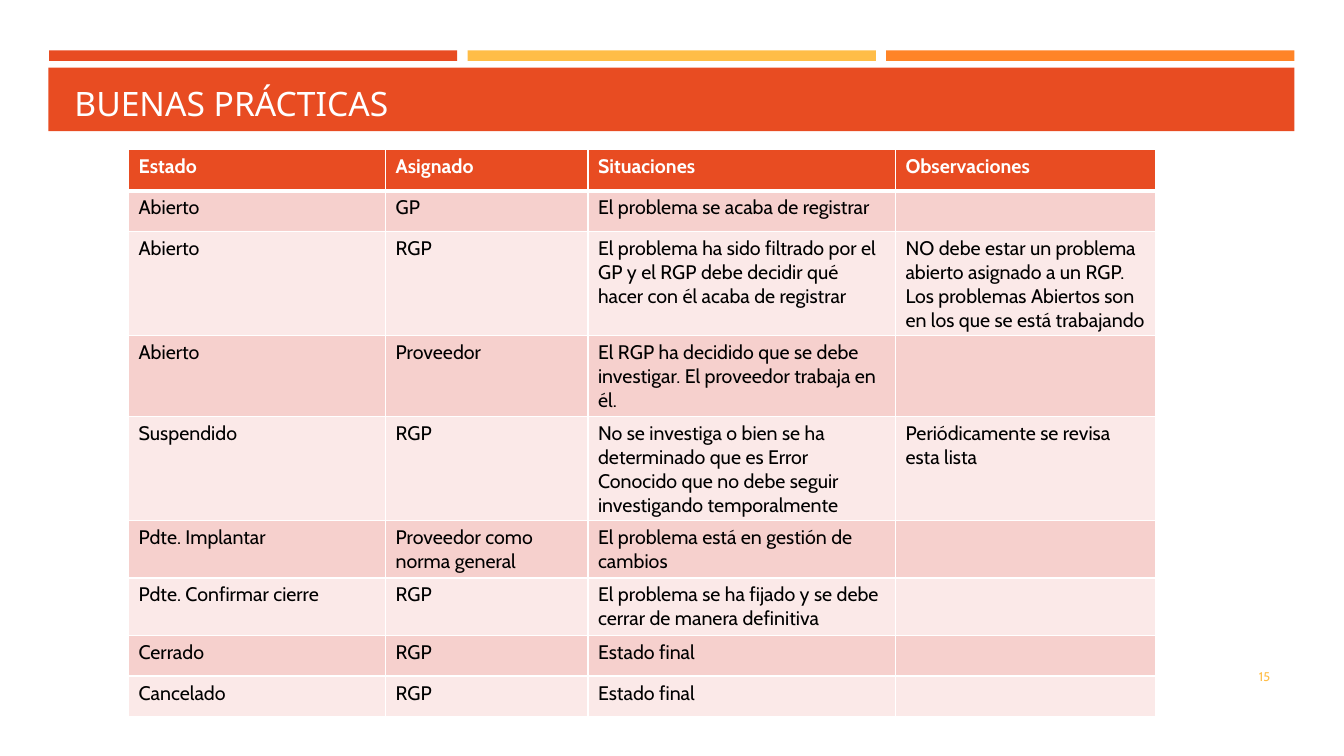
from dataclasses import dataclass

from lxml.etree import SubElement
from pptx import Presentation
from pptx.dml.color import RGBColor
from pptx.enum.shapes import MSO_SHAPE
from pptx.enum.text import MSO_ANCHOR, PP_ALIGN
from pptx.oxml.ns import qn
from pptx.util import Pt


@dataclass(frozen=True)
class Theme:
    red: str = "E84C22"
    amber: str = "FFBD47"
    orange: str = "FF8427"
    white: str = "FFFFFF"
    black: str = "000000"
    bands: tuple = ("F6D0CD", "FBE9E8")
    title_font: str = "Noto Sans"
    body_font: str = "Cabin"
    title_size: float = 24
    table_size: float = 14
    number_size: float = 9
    thin: float = 1
    thick: float = 3


HEADINGS = ("Estado", "Asignado", "Situaciones", "Observaciones")
STATES = (
    ("Abierto", "GP", "El problema se acaba de registrar", ""),
    ("Abierto", "RGP",
     "El problema ha sido filtrado por el GP y el RGP debe decidir qué hacer con él acaba de registrar",
     "NO debe estar un problema abierto asignado a un RGP. "
     "Los problemas Abiertos son en los que se está trabajando"),
    ("Abierto", "Proveedor",
     "El RGP ha decidido que se debe investigar. El proveedor trabaja en él.", ""),
    ("Suspendido", "RGP",
     "No se investiga o bien se ha determinado que es Error Conocido "
     "que no debe seguir investigando temporalmente",
     "Periódicamente se revisa esta lista"),
    ("Pdte. Implantar", "Proveedor como norma general",
     "El problema está en gestión de cambios", ""),
    ("Pdte. Confirmar cierre", "RGP",
     "El problema se ha fijado y se debe cerrar de manera definitiva", ""),
    ("Cerrado", "RGP", "Estado final", ""),
    ("Cancelado", "RGP", "Estado final", ""),
)


def write(frame, text, *, font, size, color, bold=False,
          align=PP_ALIGN.LEFT, anchor=MSO_ANCHOR.TOP):
    frame.word_wrap = True
    frame.vertical_anchor = anchor
    para = frame.paragraphs[0]
    para.alignment = align
    span = para.add_run()
    span.text = text
    span.font.name = font
    span.font.size = Pt(size)
    span.font.bold = bold
    span.font.color.rgb = RGBColor.from_string(color)


def add_borders(cell, color, **widths):
    """Draw cell edges; widths maps L, R, T and B to points."""
    properties = cell._tc.get_or_add_tcPr()
    for side, width in widths.items():
        line = SubElement(properties, qn(f"a:ln{side}"), w=str(Pt(width)))
        fill = SubElement(line, qn("a:solidFill"))
        SubElement(fill, qn("a:srgbClr"), val=color)


class SlideBuilder:
    def __init__(self, page, theme):
        self.page = page
        self.theme = theme

    def bar(self, left, top, width, height, color):
        shape = self.page.shapes.add_shape(
            MSO_SHAPE.RECTANGLE, Pt(left), Pt(top), Pt(width), Pt(height))
        shape.shadow.inherit = False
        shape.fill.solid()
        shape.fill.fore_color.rgb = RGBColor.from_string(color)
        shape.line.fill.background()

    def label(self, left, top, width, height, text, **text_format):
        box = self.page.shapes.add_textbox(Pt(left), Pt(top), Pt(width), Pt(height))
        write(box.text_frame, text, **text_format)

    def table(self, left, top, widths, row_height, rows):
        """Add a table whose first row is the heading; rows grow with their text."""
        grid = self.page.shapes.add_table(
            len(rows), len(widths), Pt(left), Pt(top),
            Pt(sum(widths)), Pt(row_height * len(rows))).table
        grid.horz_banding = False
        for column, width in zip(grid.columns, widths):
            column.width = Pt(width)
        for row_index, values in enumerate(rows):
            for column_index, text in enumerate(values):
                self.cell(grid.cell(row_index, column_index), text, row_index)

    def cell(self, cell, text, row_index):
        theme = self.theme
        heading = row_index == 0
        add_borders(cell, theme.white, L=theme.thin, R=theme.thin,
                    T=theme.thick if row_index == 1 else theme.thin,
                    B=theme.thick if heading else theme.thin)
        color = theme.red if heading else theme.bands[(row_index - 1) % 2]
        cell.fill.solid()
        cell.fill.fore_color.rgb = RGBColor.from_string(color)
        if text:
            write(cell.text_frame, text, font=theme.body_font, size=theme.table_size,
                  color=theme.white if heading else theme.black, bold=heading)


def main():
    deck = Presentation()
    deck.slide_width, deck.slide_height = Pt(960), Pt(540)
    theme = Theme()
    builder = SlideBuilder(deck.slides.add_slide(deck.slide_layouts[6]), theme)

    for index, color in enumerate((theme.red, theme.amber, theme.orange)):
        builder.bar(35 + 299 * index, 36, 291.6, 7.5, color)
    builder.bar(34.6, 48.4, 890, 45.2, theme.red)

    builder.label(46.1, 50.4, 868.3, 41, "BUENAS PRÁCTICAS", font=theme.title_font,
                  size=theme.title_size, color=theme.white, anchor=MSO_ANCHOR.BOTTOM)
    builder.label(831.6, 468.7, 82.8, 28.8, "15", font=theme.body_font,
                  size=theme.number_size, color=theme.amber,
                  align=PP_ALIGN.RIGHT, anchor=MSO_ANCHOR.MIDDLE)
    builder.table(91.8, 107, (183.6, 144.6, 219.6, 185.8), 29.2, (HEADINGS, *STATES))
    deck.save("out.pptx")


if __name__ == "__main__":
    main()
